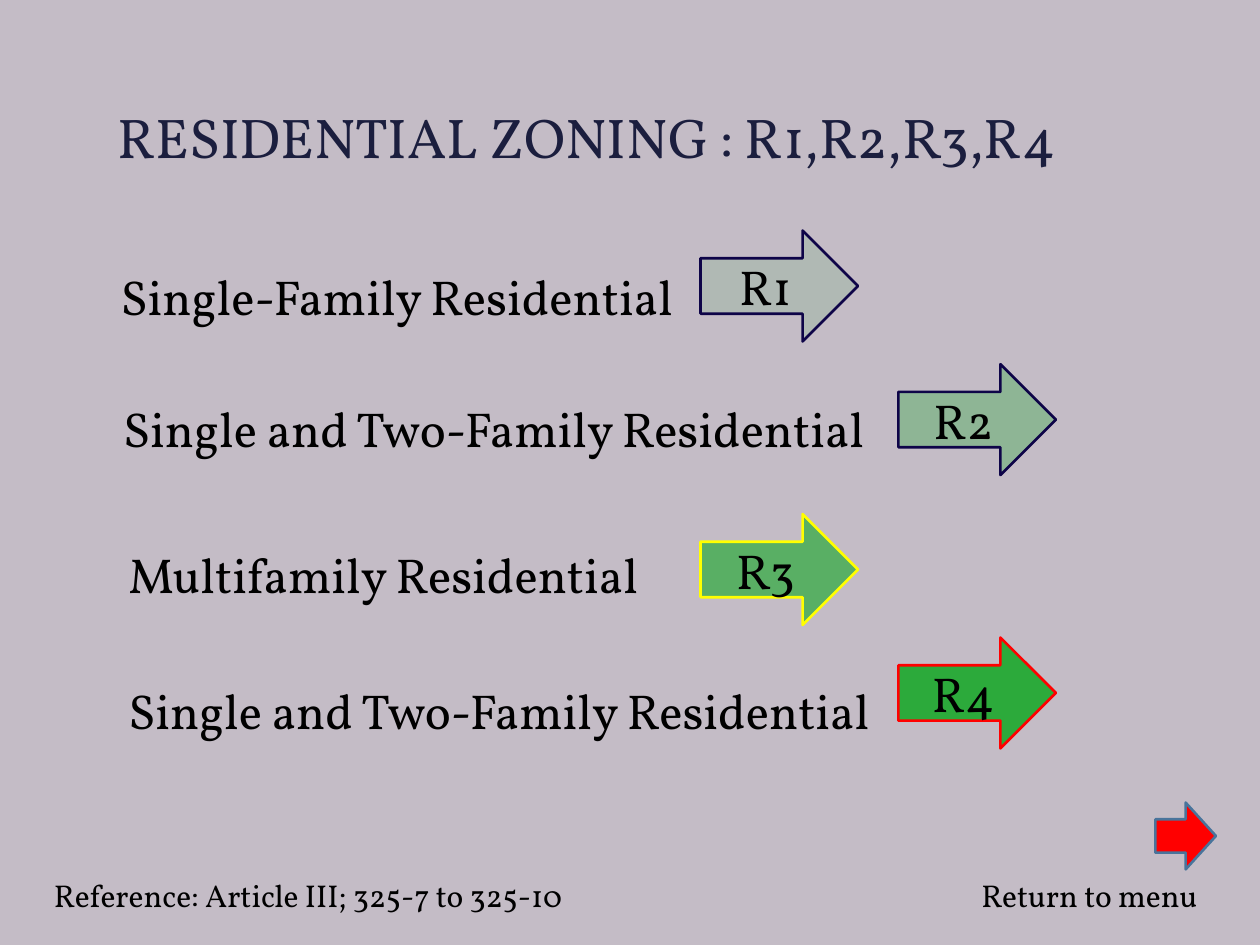
from lxml.etree import SubElement
from pptx import Presentation
from pptx.dml.color import RGBColor
from pptx.enum.shapes import MSO_SHAPE
from pptx.enum.text import MSO_ANCHOR, MSO_AUTO_SIZE, PP_ALIGN
from pptx.oxml.ns import qn
from pptx.util import Inches, Pt

FONT = "Vollkorn"
BACKGROUND = RGBColor(0xC4, 0xBC, 0xC6)
TITLE_INK = RGBColor(0x1B, 0x1E, 0x3E)
BLACK = RGBColor(0, 0, 0)
GREEN = RGBColor(0x2C, 0xAA, 0x3B)
NAVY = RGBColor(0x0E, 0x04, 0x48)
YELLOW = RGBColor(0xFF, 0xFF, 0)
RED = RGBColor(0xFF, 0, 0)
STEEL = RGBColor(0x49, 0x74, 0x9B)

NEAR, FAR = 5.56, 7.13
ZONES = [
    ("R1", 13, NAVY, (NEAR, 1.83)),
    ("R2", 35, NAVY, (FAR, 2.89)),
    ("R3", 70, YELLOW, (NEAR, 4.08)),
    ("R4", 100, RED, (FAR, 5.06)),
]
LABELS = [
    ("Single-Family Residential", (0.86, 2.07, 5.12, 0.57), 28, True),
    ("Single and Two-Family Residential", (0.88, 3.11, 6.26, 0.57), 28, False),
    ("Multifamily Residential", (0.92, 4.27, 4.33, 0.57), 28, False),
    ("Single and Two-Family Residential", (0.92, 5.35, 6.26, 0.57), 28, False),
    ("Return to menu", (7.69, 6.9, 1.96, 0.4), 18, False),
    ("Reference: Article III; 325-7 to 325-10", (0.33, 6.9, 4.27, 0.4), 18, False),
]


def write_text(shape, text, size=28, color=BLACK, align=PP_ALIGN.LEFT,
               anchor=MSO_ANCHOR.TOP, wrap=True, fit=MSO_AUTO_SIZE.NONE):
    """Put one formatted paragraph into a shape."""
    frame = shape.text_frame
    frame.word_wrap = wrap
    frame.auto_size = fit
    frame.vertical_anchor = anchor
    para = frame.paragraphs[0]
    para.alignment = align
    span = para.add_run()
    span.text = text
    span.font.name = FONT
    span.font.size = Pt(size)
    span.font.color.rgb = color


def add_title(page, text):
    """Place and fill the title placeholder."""
    title = page.shapes.title
    title.left, title.top = Inches(0.83), Inches(0.76)
    title.width, title.height = Inches(8.07), Inches(0.64)
    write_text(title, text, size=32, color=TITLE_INK, wrap=False,
               fit=MSO_AUTO_SIZE.SHAPE_TO_FIT_TEXT)


def add_label(page, text, place, size, wrap):
    """Add a text box that grows with its text."""
    box = page.shapes.add_textbox(*map(Inches, place))
    write_text(box, text, size=size, wrap=wrap,
               fit=MSO_AUTO_SIZE.SHAPE_TO_FIT_TEXT)


def add_arrow(page, place, fill, line, opacity=100):
    """Add an outlined right arrow, with fill opacity in percent."""
    arrow = page.shapes.add_shape(MSO_SHAPE.RIGHT_ARROW, *map(Inches, place))
    arrow.shadow.inherit = False
    arrow.fill.solid()
    arrow.fill.fore_color.rgb = fill
    arrow.line.color.rgb = line
    arrow.line.width = Pt(1.5)
    if opacity < 100:
        color = arrow._element.spPr.find(qn("a:solidFill")).find(qn("a:srgbClr"))
        SubElement(color, qn("a:alpha"), val=str(opacity * 1000))
    return arrow


def main():
    """Build the residential zoning slide."""
    deck = Presentation()
    deck.slide_width, deck.slide_height = Inches(10), Inches(7.5)
    page = deck.slides.add_slide(deck.slide_layouts[5])
    page.background.fill.solid()
    page.background.fill.fore_color.rgb = BACKGROUND

    add_title(page, "RESIDENTIAL ZONING : R1,R2,R3,R4")
    for zone, opacity, outline, corner in ZONES:
        arrow = add_arrow(page, (*corner, 1.25, 0.88), GREEN, outline, opacity)
        write_text(arrow, zone, align=PP_ALIGN.CENTER, anchor=MSO_ANCHOR.MIDDLE)
    add_arrow(page, (9.17, 6.37, 0.48, 0.53), RED, STEEL)
    for label in LABELS:
        add_label(page, *label)

    deck.save("out.pptx")


if __name__ == "__main__":
    main()
